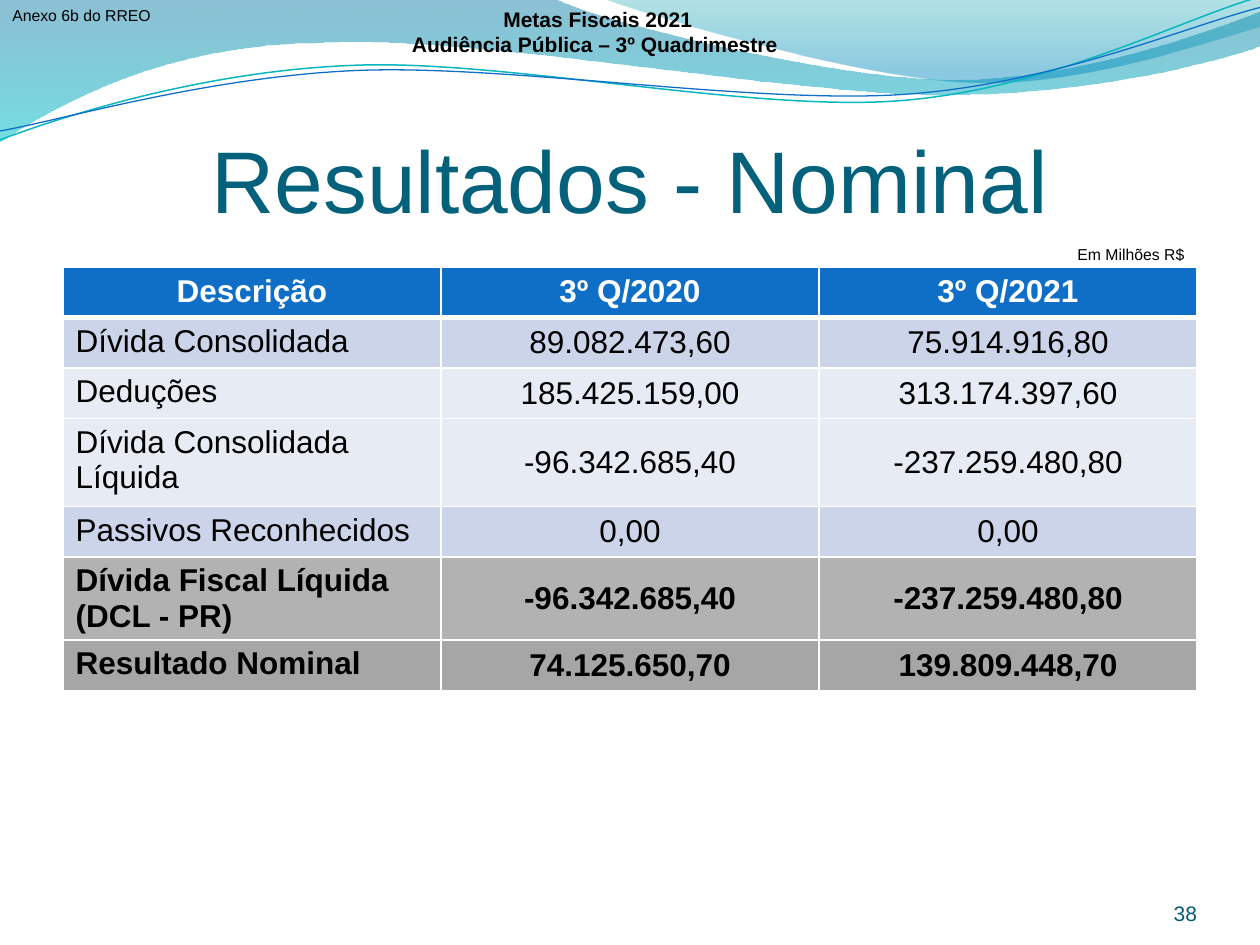
"""Build the fiscal targets slide with the nominal result table."""
import math
import pptx
import pptx.dml.color
import pptx.enum.text
import pptx.oxml
import pptx.oxml.ns
import pptx.util
from dataclasses import dataclass
from pptx.util import Inches


@dataclass
class Theme:
    font: str = "Arial"
    title: str = "04617B"
    page: str = "035C75"
    ink: str = "000000"
    white: str = "FFFFFF"
    head: str = "0F6FC6"
    teal: str = "09B7BF"
    dark: str = "CCD4EA"
    light: str = "E7EBF4"
    gray: str = "B2B2B2"
    deep: str = "A6A6A6"
    big: int = 50
    cell: int = 18
    mid: int = 12
    small: int = 9


theme = Theme()
rgb = pptx.dml.color.RGBColor.from_string
qn = pptx.oxml.ns.qn
space = pptx.oxml.ns.nsdecls("a")
align = pptx.enum.text.PP_ALIGN
anchor = pptx.enum.text.MSO_ANCHOR


def write(frame, lines, size, color, side, bold=False):
    for i, line in enumerate(lines):
        para = frame.paragraphs[0] if i == 0 else frame.add_paragraph()
        para.alignment = side
        run = para.add_run()
        run.text = line
        run.font.name = theme.font
        run.font.size = pptx.util.Pt(size)
        run.font.bold = bold
        run.font.color.rgb = rgb(color)


def trace(start, parts, closed, mid=(0, 0), tilt=0):
    dots = [start] + [part[k:k + 2] for part in parts for k in range(0, len(part), 2)]
    cos, sin = math.cos(math.radians(tilt)), math.sin(math.radians(tilt))
    spots = []
    for x, y in dots:
        dx, dy = x - mid[0], y - mid[1]
        spots.append((Inches(mid[0] + dx * cos - dy * sin),
                      Inches(mid[1] + dx * sin + dy * cos)))
    pen = slide.shapes.build_freeform(*spots[0])
    pen.add_line_segments(spots[1:], close=closed)
    shape = pen.convert_to_shape()
    shape.rotation = -tilt % 360
    shape.shadow.inherit = False
    steps = iter(list(shape._element.iter(qn("a:lnTo"))))
    for part in parts:
        group = [next(steps) for _ in range(len(part) // 2)]
        if len(group) == 3:
            bend = pptx.oxml.parse_xml(f"<a:cubicBezTo {space}/>")
            group[0].addprevious(bend)
            for step in group:
                bend.append(step[0])
                step.getparent().remove(step)
    return shape


deck = pptx.Presentation()
deck.slide_width, deck.slide_height = Inches(10), Inches(7.5)
slide = deck.slides.add_slide(deck.slide_layouts[5])

waves = [
    ((0, 0), [(4.4, -0.01), (4.76, 0.17, 6.64, 0.63, 7.58, 0.63),
              (8.53, 0.63, 9.58, 0.26, 10, 0.09), (10.01, 0.36),
              (9.83, 0.44, 8.7, 0.76, 7.46, 0.75), (6.22, 0.75, 3.82, 0.28, 2.57, 0.34),
              (1.29, 0.35, 0.46, 0.83, -0.01, 1.13)],
     [(0, "0074A0", 45), (1, "00C4CD", 55)], 270),
    ((4.79, -0.01), [(5.09, 0.11, 6.82, 0.62, 7.69, 0.65),
                     (8.56, 0.69, 9.61, 0.32, 10, 0.21), (10, 0)],
     [(0.2, "008ABF", 45), (1, "00A0A8", 30)], 90),
]
for start, parts, stops, angle in waves:
    wave = trace(start, parts, True)
    wave.line.fill.background()
    wave.fill.gradient()
    wave.fill.gradient_angle = angle
    for stop, (place, color, alpha) in zip(wave.fill.gradient_stops, stops):
        stop.position = place
        stop.color.rgb = rgb(color)
    tones = wave.fill._xPr.iter(qn("a:srgbClr"))
    for tone, (place, color, alpha) in zip(tones, stops):
        tone.append(pptx.oxml.parse_xml(f'<a:alpha {space} val="{alpha * 1000}"/>'))

curves = [
    ((0, 1.11), [(0.48, 0.93, 1.58, 0.57, 2.77, 0.52), (3.95, 0.46, 5.93, 0.89, 7.13, 0.8),
                 (8.33, 0.71, 9.38, 0.15, 9.98, -0.02)], (4.99, 0.57), theme.teal, 0.85),
    ((0, 1.04), [(0.47, 0.96, 1.64, 0.61, 2.83, 0.56), (4.03, 0.51, 5.97, 0.83, 7.17, 0.75),
                 (8.36, 0.67, 9.41, 0.21, 10, 0.06)], (5, 0.59), theme.head, 0.75),
]
for start, parts, mid, color, width in curves:
    curve = trace(start, parts, False, mid, 2.7)
    curve.fill.background()
    curve.line.color.rgb = rgb(color)
    curve.line.width = pptx.util.Pt(width)

title = slide.shapes.title
title.left, title.top, title.width, title.height = map(Inches, (0.5, 0.77, 9, 1.25))
frame = title.text_frame
frame.auto_size = pptx.enum.text.MSO_AUTO_SIZE.NONE
frame.vertical_anchor = anchor.MIDDLE
frame.margin_left = frame.margin_right = frame.margin_bottom = 0
frame.margin_top = Inches(0.05)
write(frame, ["Resultados - Nominal"], theme.big, theme.title, align.CENTER)

rows = [
    (("Descrição", "3º Q/2020", "3º Q/2021"), theme.head, 0.4, True),
    (("Dívida Consolidada", "89.082.473,60", "75.914.916,80"), theme.dark, 0.4, False),
    (("Deduções", "185.425.159,00", "313.174.397,60"), theme.light, 0.4, False),
    (("Dívida Consolidada Líquida", "-96.342.685,40", "-237.259.480,80"),
     theme.light, 0.7, False),
    (("Passivos Reconhecidos", "0,00", "0,00"), theme.dark, 0.4, False),
    (("Dívida Fiscal Líquida (DCL - PR)", "-96.342.685,40", "-237.259.480,80"),
     theme.gray, 0.4, True),
    (("Resultado Nominal", "74.125.650,70", "139.809.448,70"), theme.deep, 0.4, True),
]
grid = slide.shapes.add_table(
    len(rows), 3, Inches(0.5), Inches(2.12), Inches(9), Inches(3.4))
table = grid.table
for col in table.columns:
    col.width = Inches(3)
for r, (texts, fill, height, bold) in enumerate(rows):
    table.rows[r].height = Inches(height)
    for c, text in enumerate(texts):
        cell = table.cell(r, c)
        cell.vertical_anchor = anchor.MIDDLE if r and c else anchor.TOP
        write(cell.text_frame, [text], theme.cell, theme.ink if r else theme.white,
              align.LEFT if r and not c else align.CENTER, bold)
        cell.fill.solid()
        cell.fill.fore_color.rgb = rgb(fill)
        for i, edge in enumerate("LRTB"):
            thick = (r, edge) in ((0, "B"), (1, "T"))
            width = pptx.util.Pt(3 if thick else 0.96)
            cell._tc.tcPr.insert(i, pptx.oxml.parse_xml(
                f'<a:ln{edge} {space} w="{width}"><a:solidFill>'
                f'<a:srgbClr val="{theme.white}"/></a:solidFill></a:ln{edge}>'))
grid.height = Inches(3.4)

notes = [
    ((8.67, 6.95, 0.83, 0.4), ["38"], theme.mid, theme.page, align.RIGHT,
     anchor.BOTTOM, False, True, 0),
    ((8.45, 1.89, 1.05, 0.25), ["Em Milhões R$"], theme.small, theme.ink, align.CENTER,
     anchor.TOP, False, False, 0.1),
    ((0, 0, 1.36, 0.25), ["Anexo 6b do RREO"], theme.small, theme.ink, align.LEFT,
     anchor.TOP, False, True, 0.1),
    ((3.05, 0, 3.39, 0.5), ["Metas Fiscais 2021", "Audiência Pública – 3º Quadrimestre "],
     theme.mid, theme.ink, align.CENTER, anchor.MIDDLE, True, True, 0.1),
]
for place, lines, size, color, side, hold, bold, wrap, pad in notes:
    frame = slide.shapes.add_textbox(*map(Inches, place)).text_frame
    frame.word_wrap = wrap
    frame.vertical_anchor = hold
    frame.margin_left = frame.margin_right = Inches(pad)
    frame.margin_top = frame.margin_bottom = Inches(pad / 2)
    write(frame, lines, size, color, side, bold)

deck.save("out.pptx")
